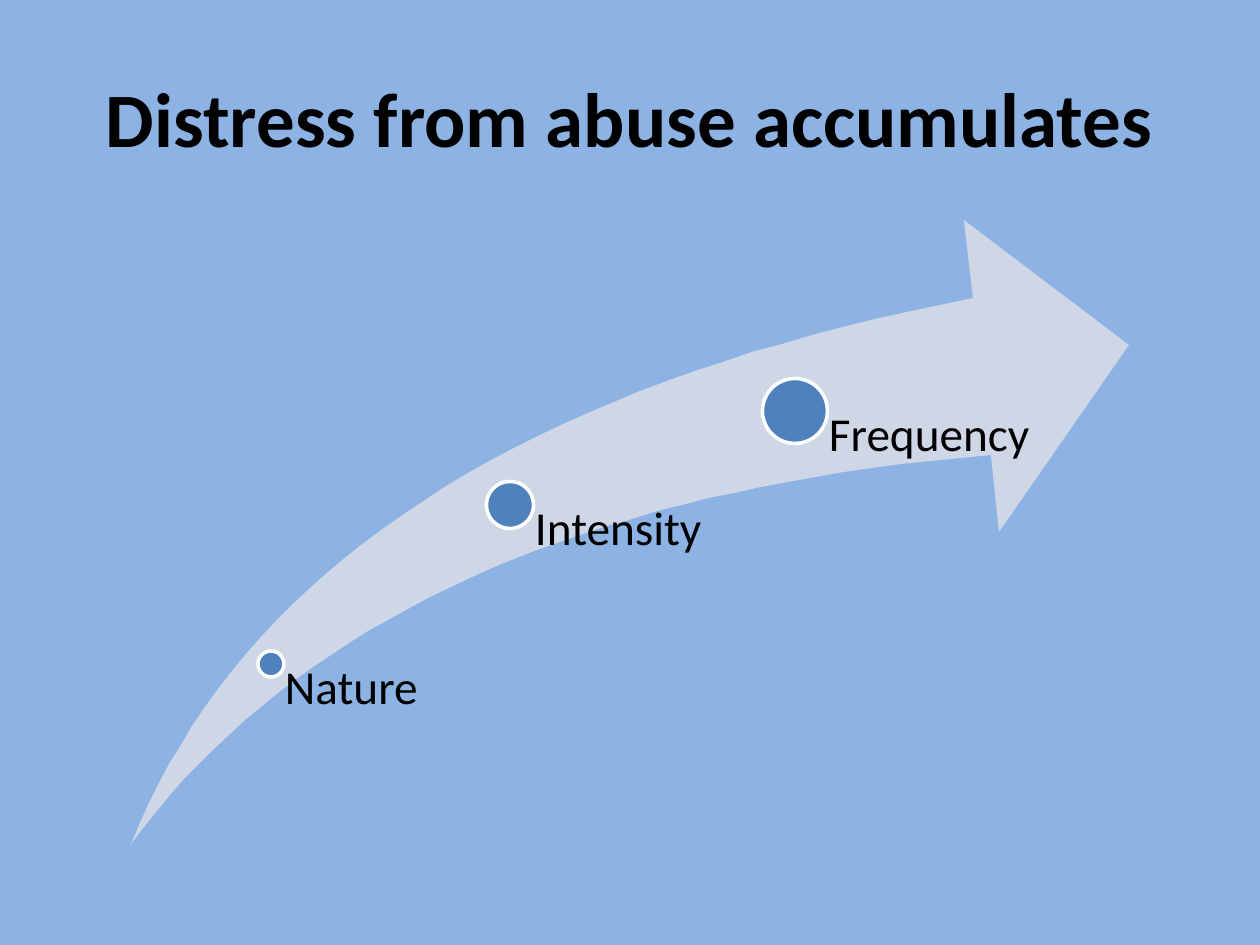
from pptx import Presentation
from pptx.dml.color import RGBColor
from pptx.enum.shapes import MSO_SHAPE
from pptx.enum.text import MSO_ANCHOR, PP_ALIGN
from pptx.util import Pt

PX = 914400 // 126
OVAL = MSO_SHAPE.OVAL
TOP, MIDDLE = MSO_ANCHOR.TOP, MSO_ANCHOR.MIDDLE
LEFT, CENTER = PP_ALIGN.LEFT, PP_ALIGN.CENTER
FONT = "Calibri"
COLORS = {
    "background": "8CB3E3",
    "arrow": "CFD7E7",
    "dot": "4F81BD",
    "outline": "FFFFFF",
    "text": "000000",
}
ARROW_BOTTOM = 844
CURVE_STEPS = 40
# label, dot centre x, dot centre y, dot diameter, label width
STAGES = [
    ("Nature", 271, 664, 26, 233),
    ("Intensity", 510, 505, 47, 239),
    ("Frequency", 795, 411, 65, 239),
]


def color(name):
    return RGBColor.from_string(COLORS[name])


def bezier(*controls):
    """Return points along a cubic curve, in px, without its start."""
    points = []
    for step in range(1, CURVE_STEPS + 1):
        t = step / CURVE_STEPS
        weights = ((1 - t) ** 3, 3 * t * (1 - t) ** 2, 3 * t * t * (1 - t), t ** 3)
        points.append(tuple(sum(w * c[axis] for w, c in zip(weights, controls))
                            for axis in (0, 1)))
    return points


def add_arrow(slide):
    tail = (131, ARROW_BOTTOM)
    upper_neck, lower_neck = (973, 298), (991, 455)
    head = [(964, 220), (1129, 345), (999, 532), lower_neck]
    outline = (bezier(tail, (242, 567), (523, 385), upper_neck)
               + head
               + bezier(lower_neck, (583, 489), (297, 619), tail))
    builder = slide.shapes.build_freeform(*tail, scale=PX)
    builder.add_line_segments(outline, close=True)
    arrow = builder.convert_to_shape()
    arrow.shadow.inherit = False
    arrow.fill.solid()
    arrow.fill.fore_color.rgb = color("arrow")
    arrow.line.fill.background()


def add_dot(slide, center_x, center_y, diameter):
    dot = slide.shapes.add_shape(
        OVAL, int((center_x - diameter / 2) * PX), int((center_y - diameter / 2) * PX),
        diameter * PX, diameter * PX)
    dot.shadow.inherit = False
    dot.fill.solid()
    dot.fill.fore_color.rgb = color("dot")
    dot.line.color.rgb = color("outline")
    dot.line.width = Pt(2)


def add_text(slide, text, box, size, insets, bold=False, align=LEFT, anchor=TOP,
             spacing=1.0):
    frame = slide.shapes.add_textbox(*(length * PX for length in box)).text_frame
    frame.word_wrap = True
    frame.vertical_anchor = anchor
    frame.margin_left, frame.margin_top, frame.margin_right, frame.margin_bottom = (
        inset * PX for inset in insets)
    paragraph = frame.paragraphs[0]
    paragraph.text = text
    paragraph.alignment = align
    paragraph.line_spacing = spacing
    paragraph.font.name = FONT
    paragraph.font.size = Pt(size)
    paragraph.font.bold = bold
    paragraph.font.color.rgb = color("text")


def add_stage(slide, label, center_x, center_y, diameter, width):
    """Add a dot and its label, whose box starts at the dot's centre."""
    add_dot(slide, center_x, center_y, diameter)
    box = (center_x, center_y, width, ARROW_BOTTOM - center_y)
    add_text(slide, label, box, 27, (round(diameter * 0.53), 0, 0, 0), spacing=0.9)


def main():
    prs = Presentation()
    prs.slide_width, prs.slide_height = 1260 * PX, 945 * PX
    slide = prs.slides.add_slide(prs.slide_layouts[6])
    slide.background.fill.solid()
    slide.background.fill.fore_color.rgb = color("background")

    add_text(slide, "Distress from abuse accumulates", (63, 38, 1134, 157), 44,
             (13, 6, 13, 6), bold=True, align=CENTER, anchor=MIDDLE)
    add_arrow(slide)
    for stage in STAGES:
        add_stage(slide, *stage)
    prs.save("out.pptx")


if __name__ == "__main__":
    main()
